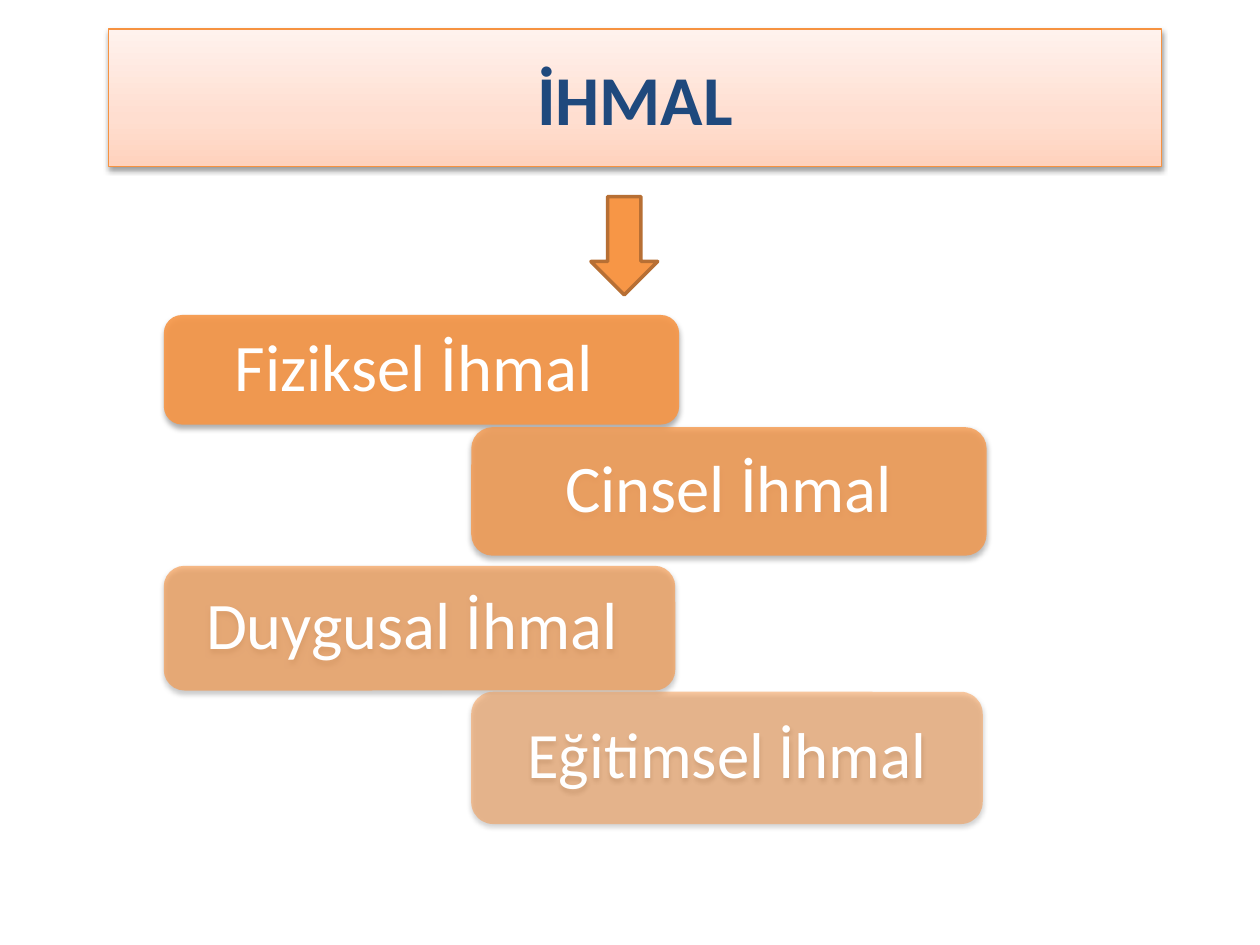
from lxml.etree import SubElement
from pptx import Presentation
from pptx.dml.color import RGBColor
from pptx.enum.shapes import MSO_SHAPE as Shape
from pptx.enum.text import MSO_ANCHOR as Anchor, PP_ALIGN as Align
from pptx.oxml.ns import qn
from pptx.util import Inches, Pt

HEADING = "İHMAL"
HEADING_PLACE = (0.86, 0.23, 8.36, 1.09)
HEADING_GRADIENT = [(0, "FFD2BD"), (35, "FFDED0"), (100, "FFF2ED")]
ARROW_PLACE = (4.69, 1.56, 0.53, 0.78)
ORANGE = "F79646"
STEP_LEFTS = (1.3, 3.74)
STEPS = [
    ("Fiziksel İhmal ", 2.5, 4.09, 0.87, 90, 38),
    ("Cinsel İhmal", 3.39, 4.09, 1.02, 77, 38),
    ("Duygusal İhmal ", 4.49, 4.06, 0.99, 63, 38),
    ("Eğitimsel İhmal", 5.49, 4.06, 1.05, 50, 37),
]


def rgb(color):
    return RGBColor.from_string(color)


def add_node(parent, tag, **attributes):
    return SubElement(parent, qn(tag), {key: str(value) for key, value in attributes.items()})


def add_color(parent, color, opacity=100):
    node = add_node(parent, "a:srgbClr", val=color)
    if opacity < 100:
        add_node(node, "a:alpha", val=opacity * 1000)


def add_shadow(shape, opacity, distance):
    shape_properties = shape._element.spPr
    effects = shape_properties.find(qn("a:effectLst"))
    if effects is None:
        effects = add_node(shape_properties, "a:effectLst")
    shadow = add_node(effects, "a:outerShdw", blurRad=Pt(3.1), dist=Pt(distance),
                      dir=5400000, rotWithShape=0)
    add_color(shadow, "000000", opacity)


def write(shape, words, size, color, bold=False):
    frame = shape.text_frame
    frame.word_wrap = True
    frame.vertical_anchor = Anchor.MIDDLE
    paragraph = frame.paragraphs[0]
    paragraph.alignment = Align.CENTER
    run = paragraph.add_run()
    run.text = words
    run.font.size, run.font.name, run.font.bold = Pt(size), "Calibri", bold
    run.font.color.rgb = rgb(color)
    return paragraph


def add_heading(slide):
    heading = slide.shapes.title
    heading.left, heading.top, heading.width, heading.height = map(Inches, HEADING_PLACE)
    geometry = add_node(heading._element.spPr, "a:prstGeom", prst="roundRect")
    add_node(geometry, "a:avLst")
    heading.fill.gradient()
    heading.fill.gradient_angle = 90
    stops = heading._element.spPr.find(".//" + qn("a:gsLst"))
    for stop in list(stops):
        stops.remove(stop)
    for position, color in HEADING_GRADIENT:
        add_color(add_node(stops, "a:gs", pos=position * 1000), color)
    heading.line.color.rgb = rgb("F69240")
    heading.line.width = Pt(0.75)
    add_shadow(heading, 38, 1.6)
    write(heading, HEADING, 40, "1F497D", bold=True)


def add_solid(slide, kind, place):
    shape = slide.shapes.add_shape(kind, *map(Inches, place))
    shape.shadow.inherit = False
    shape.fill.solid()
    shape.fill.fore_color.rgb = rgb(ORANGE)
    return shape


def add_step(slide, left, words, top, width, height, opacity, size):
    step = add_solid(slide, Shape.ROUNDED_RECTANGLE, (left, top, width, height))
    color_node = step._element.spPr.find(qn("a:solidFill")).find(qn("a:srgbClr"))
    add_node(color_node, "a:alpha", val=opacity * 1000)
    step.line.fill.background()
    add_shadow(step, 35, 1.8)
    frame = step.text_frame
    frame.margin_left = frame.margin_right = Inches(0.2)
    frame.margin_top = frame.margin_bottom = Inches(0.08)
    write(step, words, size, "FFFFFF").line_spacing = 0.9


def main():
    """Build the slide with the heading, the arrow and the staggered kinds of neglect."""
    deck = Presentation()
    deck.slide_width, deck.slide_height = Inches(10), Inches(7.5)
    slide = deck.slides.add_slide(deck.slide_layouts[5])
    for index, step in enumerate(STEPS):
        add_step(slide, STEP_LEFTS[index % 2], *step)
    arrow = add_solid(slide, Shape.DOWN_ARROW, ARROW_PLACE)
    arrow.line.color.rgb = rgb("B76F34")
    arrow.line.width = Pt(2)
    add_heading(slide)
    deck.save("out.pptx")


if __name__ == "__main__":
    main()
